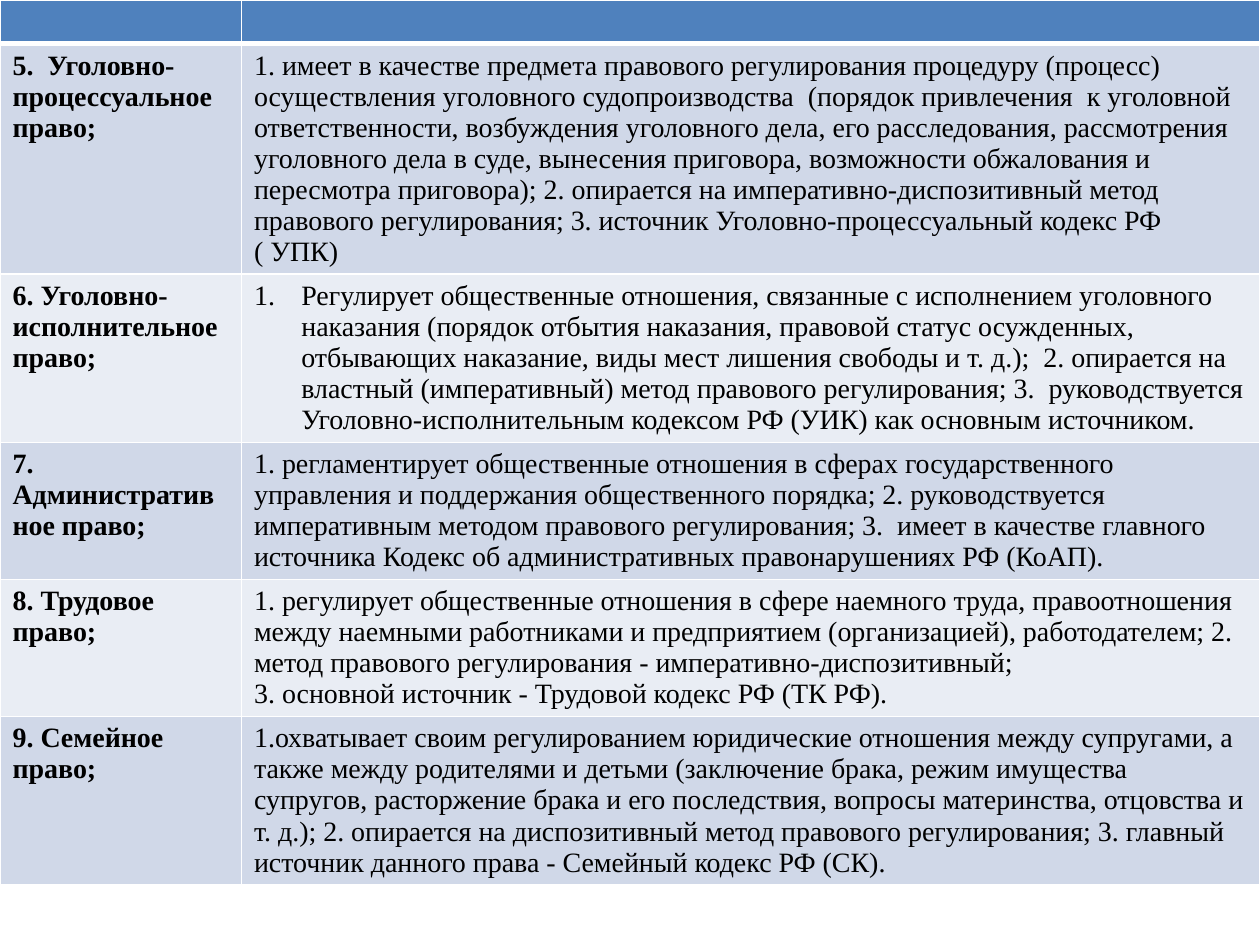
"""Builds a slide with a table of branches of law and their features."""
from dataclasses import dataclass

import pptx
import pptx.dml.color
import pptx.oxml.ns
import pptx.table
import pptx.util
from lxml import etree

Pt = pptx.util.Pt
FONT = "Times New Roman"
SIZE = 16
LINE_HEIGHT = 17.7
CELL_PADDING = 7.2
COLUMN_WIDTHS = (138, 582)
HEADER_FILL = "4F81BD"
BAND_FILLS = ("D0D8E8", "E9EDF4")
BORDER = "FFFFFF"


@dataclass
class Branch:
    """A branch of law with its features and the lines they take."""
    name: str
    features: str
    lines: int
    numbered: bool = False


BRANCHES = (
    Branch(
        "5.  Уголовно-процессуальное право;",
        "1. имеет в качестве предмета правового регулирования процедуру (процесс) "
        "осуществления уголовного судопроизводства  (порядок привлечения  к уголовной "
        "ответственности, возбуждения уголовного дела, его расследования, рассмотрения "
        "уголовного дела в суде, вынесения приговора, возможности обжалования и "
        "пересмотра приговора); 2. опирается на императивно-диспозитивный метод "
        "правового регулирования; 3. источник Уголовно-процессуальный кодекс РФ ( УПК)",
        7),
    Branch(
        "6. Уголовно-исполнительное право;",
        "Регулирует общественные отношения, связанные с исполнением уголовного "
        "наказания (порядок отбытия наказания, правовой статус осужденных, "
        "отбывающих наказание, виды мест лишения свободы и т. д.);  2. опирается на "
        "властный (императивный) метод правового регулирования; 3.  руководствуется "
        "Уголовно-исполнительным кодексом РФ (УИК) как основным источником.",
        5, numbered=True),
    Branch(
        "7. Административное право;",
        "1. регламентирует общественные отношения в сферах государственного "
        "управления и поддержания общественного порядка; 2. руководствуется "
        "императивным методом правового регулирования; 3.  имеет в качестве главного "
        "источника Кодекс об административных правонарушениях РФ (КоАП).",
        4),
    Branch(
        "8. Трудовое право;",
        "1. регулирует общественные отношения в сфере наемного труда, правоотношения "
        "между наемными работниками и предприятием (организацией), работодателем; 2.  "
        "метод правового регулирования - императивно-диспозитивный;\n"
        "3. основной источник - Трудовой кодекс РФ (ТК РФ).",
        4),
    Branch(
        "9. Семейное право;",
        "1.охватывает своим регулированием юридические отношения между супругами, а "
        "также между родителями и детьми (заключение брака, режим имущества "
        "супругов, расторжение брака и его последствия, вопросы материнства, отцовства и "
        "т. д.); 2. опирается на диспозитивный метод правового регулирования; 3. главный "
        "источник данного права - Семейный кодекс РФ (СК).",
        5),
)


def rgb(color: str) -> pptx.dml.color.RGBColor:
    """Return the colour of a hex string."""
    return pptx.dml.color.RGBColor.from_string(color)


def add_element(parent: etree._Element, tag: str, **attrs: object) -> etree._Element:
    """Append a drawing element with the given attributes."""
    return etree.SubElement(parent, pptx.oxml.ns.qn(tag),
                            {k: str(v) for k, v in attrs.items()})


def style_cell(cell: pptx.table._Cell, fill: str, top: float, bottom: float) -> None:
    """Give a cell its borders and fill."""
    tcPr = cell._tc.get_or_add_tcPr()
    for side, width in {"L": 1, "R": 1, "T": top, "B": bottom}.items():
        ln = add_element(tcPr, f"a:ln{side}", w=Pt(width))
        add_element(add_element(ln, "a:solidFill"), "a:srgbClr", val=BORDER)
    cell.fill.solid()
    cell.fill.fore_color.rgb = rgb(fill)


def write_cell(cell: pptx.table._Cell, text: str, bold: bool) -> None:
    """Write and format the text of a cell."""
    cell.text = text
    for p in cell.text_frame.paragraphs:
        for r in p.runs:
            formats = {"name": FONT, "size": Pt(SIZE), "bold": bold}
            for name, value in formats.items():
                setattr(r.font, name, value)
            r.font.color.rgb = rgb("000000")


def number_cell(cell: pptx.table._Cell) -> None:
    """Number the paragraph of a cell with a hanging indent."""
    pPr = cell.text_frame.paragraphs[0]._p.get_or_add_pPr()
    for name, value in {"marL": Pt(27), "indent": -Pt(27)}.items():
        pPr.set(name, str(value))
    add_element(pPr, "a:buFont", typeface="+mj-lt")
    add_element(pPr, "a:buAutoNum", type="arabicPeriod")


def main() -> None:
    """Build and save the slide."""
    prs = pptx.Presentation()
    prs.slide_width, prs.slide_height = Pt(720), Pt(540)
    s = prs.slides.add_slide(prs.slide_layouts[6])
    heights = [n * LINE_HEIGHT + CELL_PADDING
               for n in (1, *(b.lines for b in BRANCHES))]
    table = s.shapes.add_table(len(heights), len(COLUMN_WIDTHS), Pt(0), Pt(0),
                               Pt(sum(COLUMN_WIDTHS)), Pt(sum(heights))).table
    for column, width in zip(table.columns, COLUMN_WIDTHS):
        column.width = Pt(width)
    for row, height in zip(table.rows, heights):
        row.height = Pt(height)

    for cell in table.rows[0].cells:
        style_cell(cell, HEADER_FILL, 1, 3)
        p = cell.text_frame.paragraphs[0]._p
        end = add_element(p, "a:endParaRPr", sz=SIZE * 100)
        add_element(end, "a:latin", typeface=FONT)
    for i, branch in enumerate(BRANCHES):
        name, features = table.rows[i + 1].cells
        for cell in (name, features):
            style_cell(cell, BAND_FILLS[i % 2], 3 if i == 0 else 1, 1)
        write_cell(name, branch.name, True)
        write_cell(features, branch.features, False)
        if branch.numbered:
            number_cell(features)
    prs.save("out.pptx")


if __name__ == "__main__":
    main()
